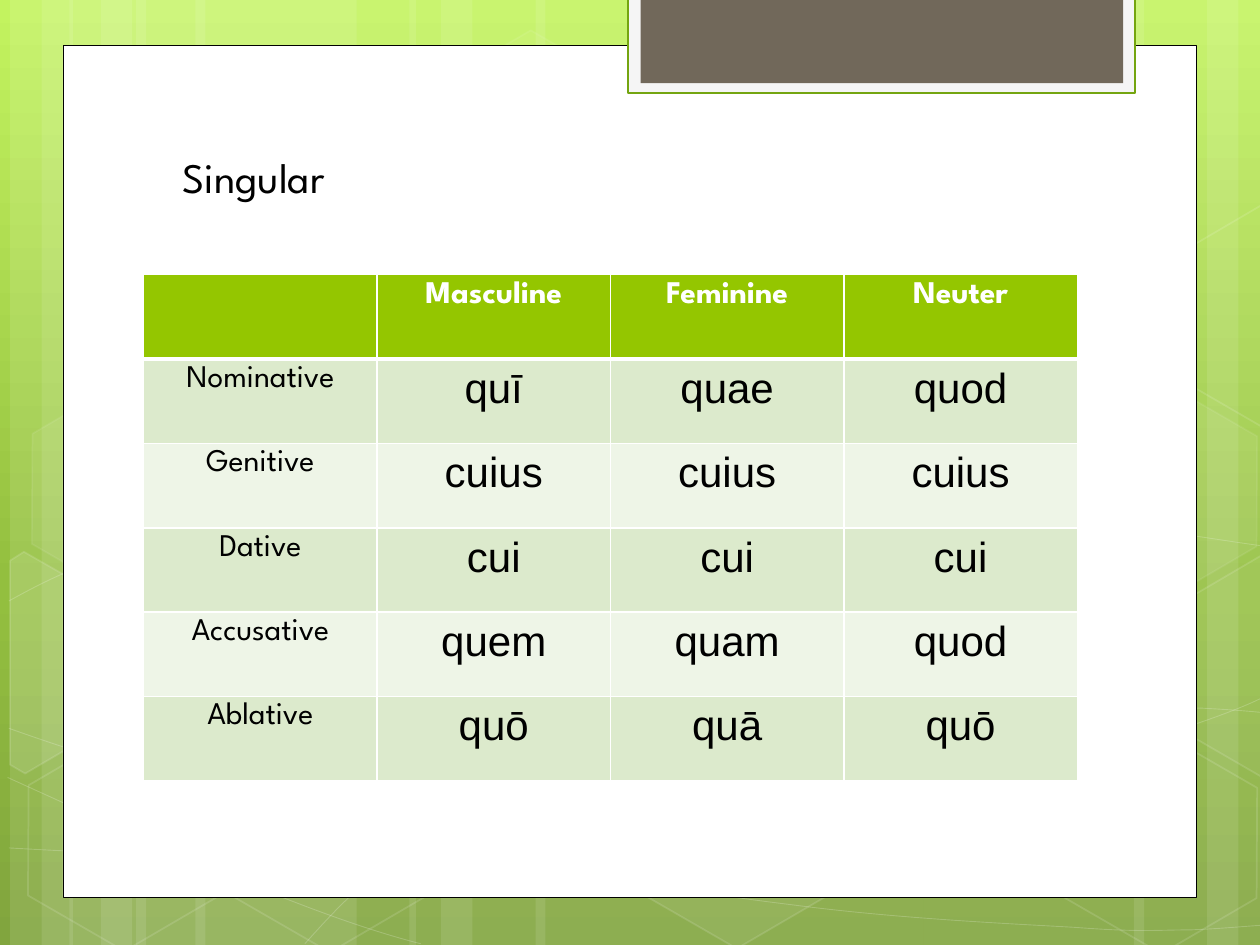
import copy
from dataclasses import dataclass

import lxml.etree
import pptx
import pptx.dml.color
import pptx.enum.shapes
import pptx.enum.text
import pptx.oxml.ns
import pptx.util

qn = pptx.oxml.ns.qn
SHAPE = pptx.enum.shapes.MSO_SHAPE
ALIGN = pptx.enum.text.PP_ALIGN
COLUMNS = 100
WIDTH, HEIGHT = pptx.util.Inches(10), pptx.util.Inches(7.5)
BOTTOM = COLUMNS * HEIGHT / WIDTH


@dataclass(frozen=True)
class Theme:
    white: str = "FFFFFF"
    black: str = "000000"
    header: str = "94C600"
    bands: tuple = ("DCEACC", "EEF5E7")
    tab_rim: str = "F5F5F5"
    tab_line: str = "74A510"
    tab: str = "71685A"
    sky: tuple = ((0, "C3F35F"), (0.62, "93BF3F"), (1, "81A53E"))
    heading: str = "League Spartan"
    body: str = "Arial"
    label_size: int = 18
    large_size: int = 24


THEME = Theme()

CURVES = [
    [(.7, 67.3), (6.1, 67.6), (11.5, 67.9), (19, 67.8), (26.5, 67.7), (35.8, 67.5),
     (45.8, 66.5), (55.8, 65.5), (70, 63.6), (79.2, 61.7), (88.3, 59.8), (97.7, 56.8), (100.7, 55.1)],
    [(.7, 47.7), (3.6, 46.1), (6.5, 44.6), (12.1, 43.1), (17.8, 41.6), (25.9, 39.4),
     (34.7, 38.7), (43.6, 38), (54.4, 37.9), (65.4, 38.7), (76.4, 39.5), (94.7, 42.6), (100.7, 43.4)],
    [(.6, 61.7), (12.7, 67.2), (24.7, 72.7), (33.4, 74.9)],
    [(.7, 57.8), (3.8, 58.9), (7, 60), (12.8, 61.6), (18.6, 63.1), (27.3, 65.6), (35.7, 67.3),
     (44, 69), (54.5, 70.8), (62.8, 71.8), (71.1, 72.9), (80, 73.3), (85.3, 73.6),
     (90.5, 74), (91.9, 73.8), (94.5, 73.8), (97.1, 73.7), (98.9, 73.5), (100.7, 73.4)],
    [(24.2, 74.9), (26, 72.9), (27.8, 70.9), (30.2, 69.1), (32.6, 67.3), (36, 65.3), (38.8, 63.9),
     (41.6, 62.5), (43.3, 61.9), (47, 60.9), (50.6, 59.9), (57.3, 58.5), (60.8, 57.8),
     (64.4, 57.1), (64.9, 57.1), (68, 56.9), (71.1, 56.6), (76, 56.3), (79.4, 56.2),
     (82.9, 56.1), (88.6, 56.2), (95.3, 56.2), (97.1, 56.3), (98.8, 56.4), (100.6, 56.6)],
]
HEXAGONS = [
    (33.4, 3.6, 4, 8), (49.7, 58.9, 6, 12), (1.1, 59.1, 0, 12), (1.4, 31.2, 7, 8),
    (17.4, 59.2, 0, 12), (83.4, 59.3, 0, 12), (83.4, 31.4, 7, 8),
]
CUT_HEXAGONS = [
    ([(.8, 44.5), (1.9, 43.8), (9.6, 48.2), (9.5, 57), (2, 61.4), (.8, 60.7)], 10),
    ([(92.6, 48.5), (100.1, 44.1), (100.9, 44.6), (100.9, 61.3), (100.2, 61.7), (92.6, 57.3)], 4),
    ([(92.6, 20.7), (100.1, 16.3), (101, 16.8), (100.9, 33.5), (100.2, 33.9), (92.6, 29.5)], 0),
]
ROWS = [
    ("", "Masculine", "Feminine", "Neuter"),
    ("Nominative", "quī", "quae", "quod"),
    ("Genitive", "cuius", "cuius", "cuius"),
    ("Dative", "cui", "cui", "cui"),
    ("Accusative", "quem", "quam", "quod"),
    ("Ablative", "quō", "quā", "quō"),
]


def unit(n):
    return round(n * WIDTH / COLUMNS)


def rgb(value):
    return pptx.dml.color.RGBColor.from_string(value)


def set_alpha(shape, place, percent):
    if percent < 100:
        color = shape._element.spPr.find("/".join(qn(t) for t in place + ("a:solidFill", "a:srgbClr")))
        lxml.etree.SubElement(color, qn("a:alpha"), val=str(percent * 1000))


def paint(shape, fill=None, fill_alpha=100, line=None, weight=1, line_alpha=100):
    shape.shadow.inherit = False
    if fill and fill_alpha:
        shape.fill.solid()
        shape.fill.fore_color.rgb = rgb(fill)
        set_alpha(shape, (), fill_alpha)
    else:
        shape.fill.background()
    if line:
        shape.line.width = pptx.util.Pt(weight)
        shape.line.color.rgb = rgb(line)
        set_alpha(shape, ("a:ln",), line_alpha)
    else:
        shape.line.fill.background()


def add_preset(s, kind, box, **style):
    shape = s.shapes.add_shape(kind, *map(unit, box))
    paint(shape, **style)
    return shape


def add_outline(s, points, closed, **style):
    start, *rest = [tuple(map(unit, p)) for p in points]
    builder = s.shapes.build_freeform(*start)
    builder.add_line_segments(rest, close=closed)
    shape = builder.convert_to_shape()
    paint(shape, **style)
    return shape


def add_curve(s, points, **style):
    shape = add_outline(s, points, False, **style)
    legs = list(shape._element.iter(qn("a:lnTo")))
    for i in range(0, len(legs), 3):
        bend = lxml.etree.Element(qn("a:cubicBezTo"))
        legs[i].addprevious(bend)
        for leg in legs[i:i + 3]:
            bend.append(leg[0])
            leg.getparent().remove(leg)


def add_sky(s):
    fill = s.background.fill
    fill.gradient()
    fill.gradient_angle = 270
    stops = s._element.find(".//" + qn("a:gsLst"))
    stops.append(copy.deepcopy(stops[-1]))
    for stop, (position, color) in zip(fill.gradient_stops, THEME.sky):
        stop.position = position
        stop.color.rgb = rgb(color)


def add_stripes(s):
    for start, wide, mirrored in ((.8, 17.5, False), (5.5, 17.5, False),
                                  (-.8, 17.5, True), (32.5, 30.8, False)):
        for offset, width in ((10, wide), (0, 5), (2.5, 8.3)):
            left = start + offset
            if mirrored:
                left = COLUMNS - left - width
            add_preset(s, SHAPE.RECTANGLE, (left, 0, width, BOTTOM), fill=THEME.white, fill_alpha=10)


def add_pattern(s):
    for points in CURVES:
        add_curve(s, points, line=THEME.white, weight=0.5, line_alpha=20)
    for left, top, fill_alpha, line_alpha in HEXAGONS:
        hexagon = add_preset(s, SHAPE.HEXAGON, (left, top, 17.5, 15.2), fill=THEME.white,
                             fill_alpha=fill_alpha, line=THEME.white, line_alpha=line_alpha)
        hexagon.adjustments[0] = 0.285
        hexagon.rotation = 30
    for points, alpha in CUT_HEXAGONS:
        add_outline(s, points, True, fill=THEME.white, fill_alpha=alpha, line=THEME.white, line_alpha=12)


def add_panel(s):
    add_preset(s, SHAPE.RECTANGLE, (5, 3.6, 90, 67.65), fill=THEME.white, line=THEME.black, weight=0.5)
    add_preset(s, SHAPE.RECTANGLE, (49.85, -.2, 40.25, 7.6), fill=THEME.tab_rim, line=THEME.tab_line, weight=1.25)
    add_preset(s, SHAPE.RECTANGLE, (50.85, -.2, 38.3, 6.8), fill=THEME.tab)


def move_to_master(prs, s):
    tree = prs.slide_master.shapes._spTree
    decorations = [shape for shape in s.shapes if not shape.is_placeholder]
    for number, shape in enumerate(decorations, 100):
        shape._element.nvSpPr.cNvPr.set("id", str(number))
        tree.append(shape._element)


def write(tf, text, align, **format_values):
    p = tf.paragraphs[0]
    p.alignment = align
    r = p.add_run()
    r.text = text
    color = format_values.pop("color")
    for name, value in format_values.items():
        setattr(r.font, name, value)
    r.font.color.rgb = rgb(color)


def add_borders(cell, weights):
    tc_pr = cell._tc.get_or_add_tcPr()
    for i, (side, weight) in enumerate(zip("LRTB", weights)):
        line = lxml.etree.Element(qn("a:ln" + side), w=str(pptx.util.Pt(weight)))
        solid = lxml.etree.SubElement(line, qn("a:solidFill"))
        lxml.etree.SubElement(solid, qn("a:srgbClr"), val=THEME.white)
        tc_pr.insert(i, line)


def add_declension(s):
    box = map(unit, (11.4, 21.8, 74.1, 40.2))
    table = s.shapes.add_table(len(ROWS), len(ROWS[0]), *box).table
    for i, row in enumerate(ROWS):
        for j, text in enumerate(row):
            cell = table.cell(i, j)
            cell.fill.solid()
            cell.fill.fore_color.rgb = rgb(THEME.bands[(i - 1) % 2] if i else THEME.header)
            add_borders(cell, (1, 1, 3 if i == 1 else 1, 1 if i else 3))
            label = i == 0 or j == 0
            if text:
                write(cell.text_frame, text, ALIGN.CENTER, bold=i == 0,
                      name=THEME.heading if label else THEME.body,
                      size=pptx.util.Pt(THEME.label_size if label else THEME.large_size),
                      color=THEME.black if i else THEME.white)


def add_title(s, text):
    title = s.shapes.title
    for name, value in zip(("left", "top", "width", "height"), (13.5, 11.55, 26.4, 5)):
        setattr(title, name, unit(value))
    tf = title.text_frame
    tf.word_wrap = True
    tf.vertical_anchor = pptx.enum.text.MSO_ANCHOR.TOP
    tf.auto_size = pptx.enum.text.MSO_AUTO_SIZE.SHAPE_TO_FIT_TEXT
    write(tf, text, ALIGN.LEFT, name=THEME.heading, size=pptx.util.Pt(THEME.large_size), color=THEME.black)
    s.shapes._spTree.append(title._element)


def main():
    prs = pptx.Presentation()
    prs.slide_width, prs.slide_height = WIDTH, HEIGHT
    s = prs.slides.add_slide(prs.slide_layouts[5])
    add_sky(s)
    add_stripes(s)
    add_pattern(s)
    add_panel(s)
    move_to_master(prs, s)
    add_declension(s)
    add_title(s, "Singular")
    prs.save("out.pptx")


if __name__ == "__main__":
    main()
